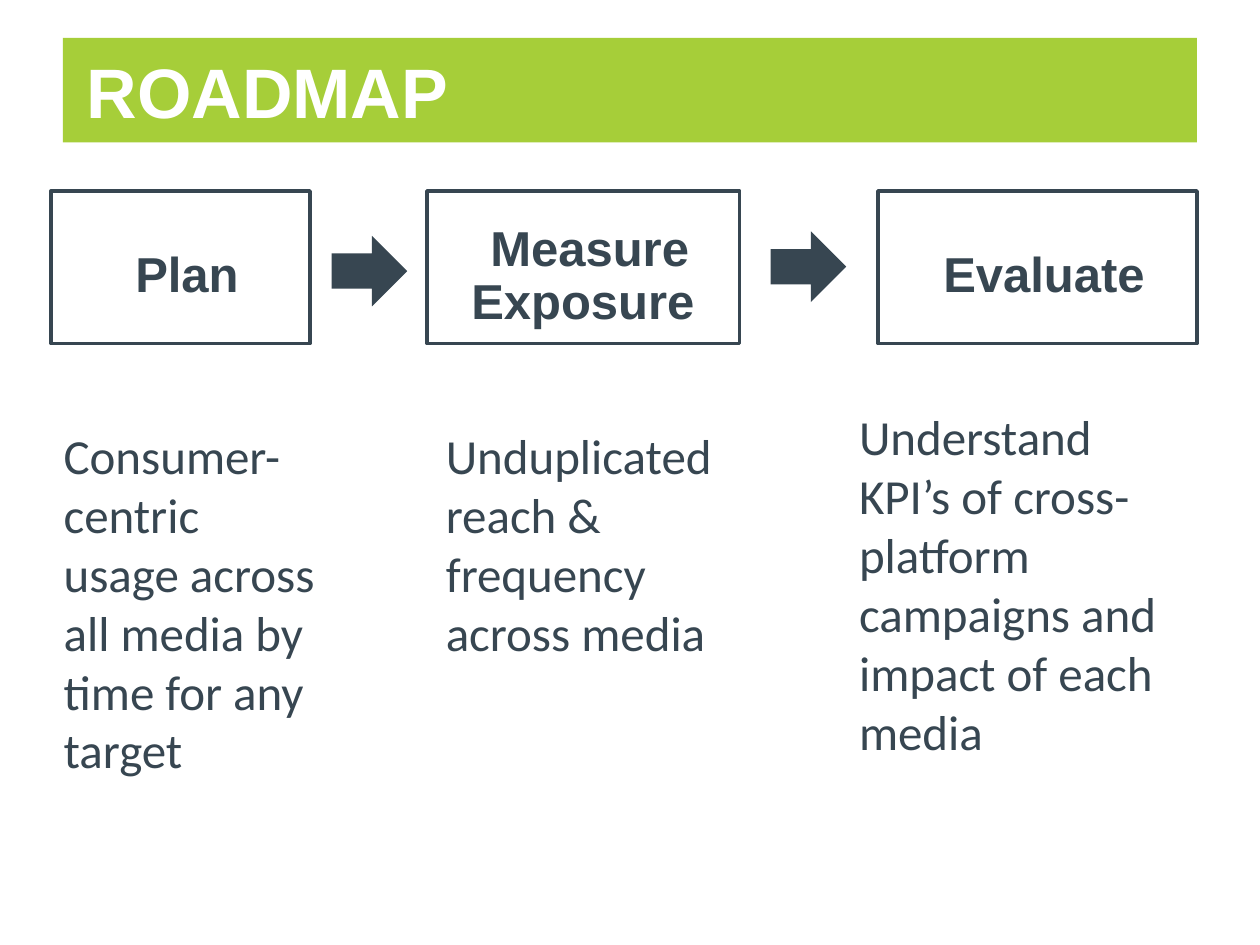
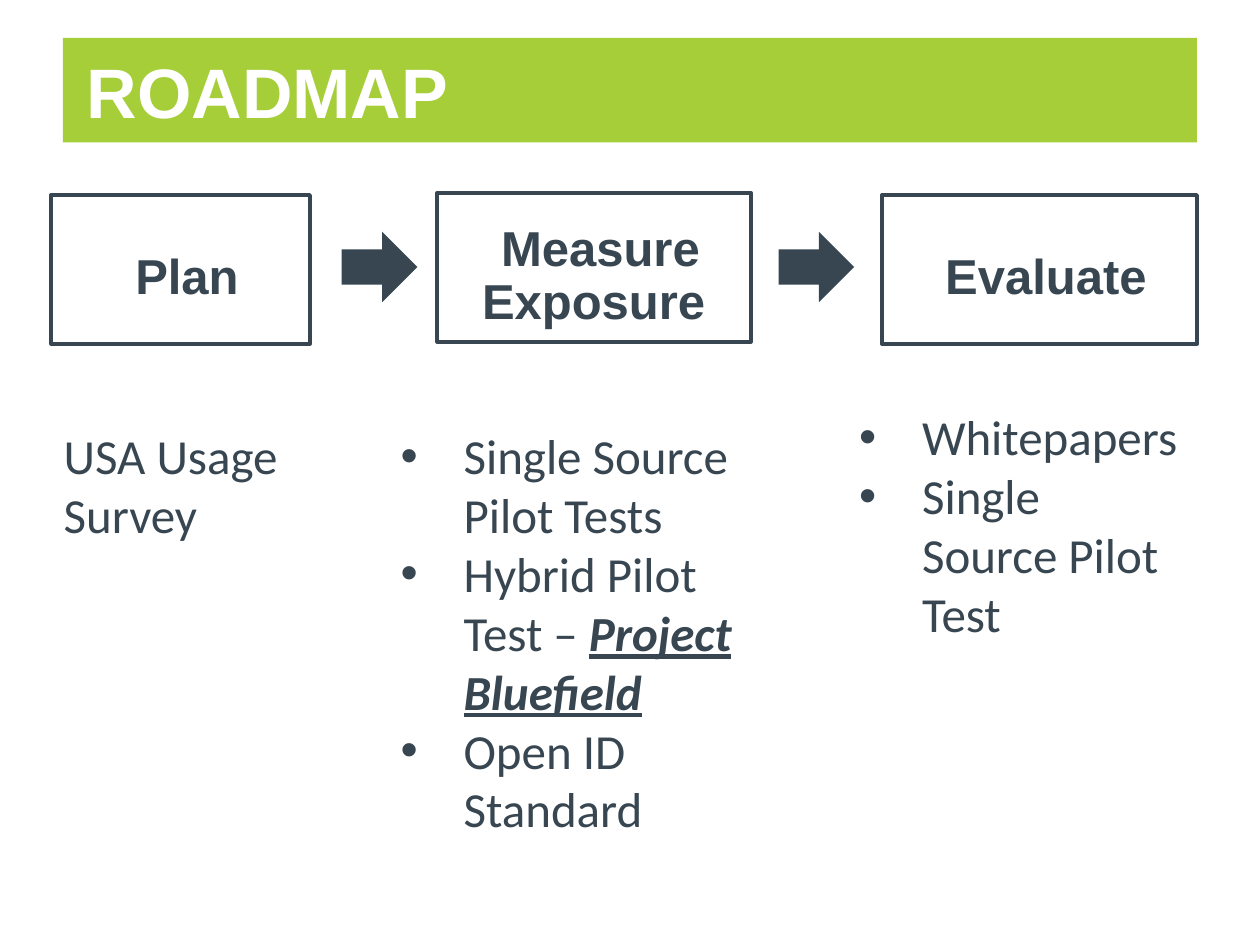
"""Build two roadmap slides that share a title band and a three-step flow."""
from typing import NamedTuple

from lxml.etree import SubElement as Sub
from pptx import Presentation
from pptx.dml.color import RGBColor
from pptx.enum.shapes import MSO_SHAPE as Form
from pptx.enum.text import MSO_ANCHOR as Anchor, MSO_AUTO_SIZE as Fit, PP_ALIGN as Align
from pptx.oxml.ns import qn
from pptx.slide import Slide
from pptx.util import Pt

GREEN = RGBColor(0xA6, 0xCE, 0x39)
SLATE = RGBColor(0x37, 0x46, 0x51)
WHITE = RGBColor(0xFF, 0xFF, 0xFF)
HEAD_FONT, BODY_FONT = "Arial", "Calibri"
TITLE_SIZE, TEXT_SIZE = 40, 28
INDENT = Pt(36)
STEPS = ("Plan", "Measure\nExposure ", "Evaluate")
ARROW_W, ARROW_H = 43.2, 40.3


class Area(NamedTuple):
    left: float
    top: float
    width: float
    height: float


class Note(NamedTuple):
    area: Area
    lines: tuple[str, ...]
    bullets: bool = False
    stress: str = ""


class Page(NamedTuple):
    boxes: tuple[Area, ...]
    arrows: tuple[tuple[float, float], ...]
    notes: tuple[Note, ...]


BAND = Area(36, 21.6, 648, 59.8)
TITLE = Area(42.5, 21.6, 641.5, 59.8)

PAGES = (
    Page(
        boxes=(
            Area(29.3, 109.2, 147.8, 87.1),
            Area(244, 109.2, 178.6, 87.1),
            Area(501.8, 109.2, 182.2, 87.1),
        ),
        arrows=((189.5, 134.8), (440.4, 132.3)),
        notes=(
            Note(
                Area(29.3, 239.8, 160.6, 211),
                ("Consumer-centric usage across all media by time for any target",),
            ),
            Note(
                Area(247.7, 239.8, 172.8, 156.2),
                ("Unduplicated reach & frequency across media",),
            ),
            Note(
                Area(483.8, 229, 200.2, 211),
                ("Understand KPI’s of cross-platform campaigns and impact of each media",),
            ),
        ),
    ),
    Page(
        boxes=(
            Area(29.3, 111.5, 147.8, 85),
            Area(249.8, 110.2, 179.3, 85),
            Area(504, 111.5, 180, 85),
        ),
        arrows=((195.3, 132.4), (444.9, 132.4)),
        notes=(
            Note(Area(29.3, 239.8, 160.6, 74.9), ("USA Usage Survey",)),
            Note(
                Area(221.8, 239.8, 207.4, 257.8),
                (
                    "Single Source Pilot Tests",
                    "Hybrid Pilot Test – Project Bluefield",
                    "Open ID Standard",
                ),
                bullets=True,
                stress="Project Bluefield",
            ),
            Note(
                Area(483.8, 229, 200.2, 143.3),
                ("Whitepapers", "Single Source Pilot Test"),
                bullets=True,
            ),
        ),
    ),
)


def place(area: Area) -> tuple[Pt, ...]:
    return tuple(Pt(side) for side in area)


def style(runs, font: str, size: float, color: RGBColor, bold: bool = False) -> None:
    for run in runs:
        run.font.name = font
        run.font.size = Pt(size)
        run.font.bold = bold
        run.font.color.rgb = color


def add_form(slide: Slide, form: Form, area: Area, fill: RGBColor | None = None):
    shape = slide.shapes.add_shape(form, *place(area))
    shape.shadow.inherit = False
    if fill is None:
        shape.fill.background()
        shape.line.color.rgb = SLATE
        shape.line.width = Pt(2.25)
    else:
        shape.fill.solid()
        shape.fill.fore_color.rgb = fill
        shape.line.fill.background()
    return shape


def add_title(slide: Slide, text: str) -> None:
    band = add_form(slide, Form.RECTANGLE, BAND, GREEN)
    title = slide.shapes.title
    title.element.addprevious(band.element)
    title.left, title.top, title.width, title.height = place(TITLE)
    frame = title.text_frame
    frame.text = text
    frame.auto_size = Fit.NONE
    frame.vertical_anchor = Anchor.MIDDLE
    para = frame.paragraphs[0]
    para.alignment = Align.LEFT
    style(para.runs, HEAD_FONT, TITLE_SIZE, WHITE, bold=True)


def add_step(slide: Slide, area: Area, text: str) -> None:
    frame = add_form(slide, Form.RECTANGLE, area).text_frame
    frame.word_wrap = True
    frame.vertical_anchor = Anchor.MIDDLE
    frame.margin_left = frame.margin_top = Pt(14.4)
    frame.margin_right, frame.margin_bottom = Pt(7.2), Pt(3.6)
    para = frame.paragraphs[0]
    para.text = text
    para.alignment = Align.CENTER
    para.line_spacing = 0.9
    style(para.runs, HEAD_FONT, TEXT_SIZE, SLATE, bold=True)


def add_bullet(para) -> None:
    props = para._p.get_or_add_pPr()
    props.set("marL", str(INDENT))
    props.set("indent", str(-INDENT))
    Sub(props, qn("a:buFont")).set("typeface", HEAD_FONT)
    Sub(props, qn("a:buChar")).set("char", "•")


def add_note(slide: Slide, note: Note) -> None:
    frame = slide.shapes.add_textbox(*place(note.area)).text_frame
    frame.word_wrap = True
    frame.auto_size = Fit.SHAPE_TO_FIT_TEXT
    for order, line in enumerate(note.lines):
        para = frame.add_paragraph() if order else frame.paragraphs[0]
        if note.bullets:
            add_bullet(para)
        marked = bool(note.stress) and line.endswith(note.stress)
        para.text = line.removesuffix(note.stress)
        if marked:
            para.add_run().text = note.stress
        style(para.runs, BODY_FONT, TEXT_SIZE, SLATE)
        if marked:
            font = para.runs[-1].font
            font.bold = font.italic = font.underline = True


def add_page(deck, page: Page) -> None:
    slide = deck.slides.add_slide(deck.slide_layouts[5])
    add_title(slide, "ROADMAP")
    for area, text in zip(page.boxes, STEPS):
        add_step(slide, area, text)
    for left, top in page.arrows:
        add_form(slide, Form.RIGHT_ARROW, Area(left, top, ARROW_W, ARROW_H), SLATE)
    for note in page.notes:
        add_note(slide, note)


def main() -> None:
    deck = Presentation()
    deck.slide_width, deck.slide_height = Pt(720), Pt(540)
    for page in PAGES:
        add_page(deck, page)
    deck.save("out.pptx")


if __name__ == "__main__":
    main()
